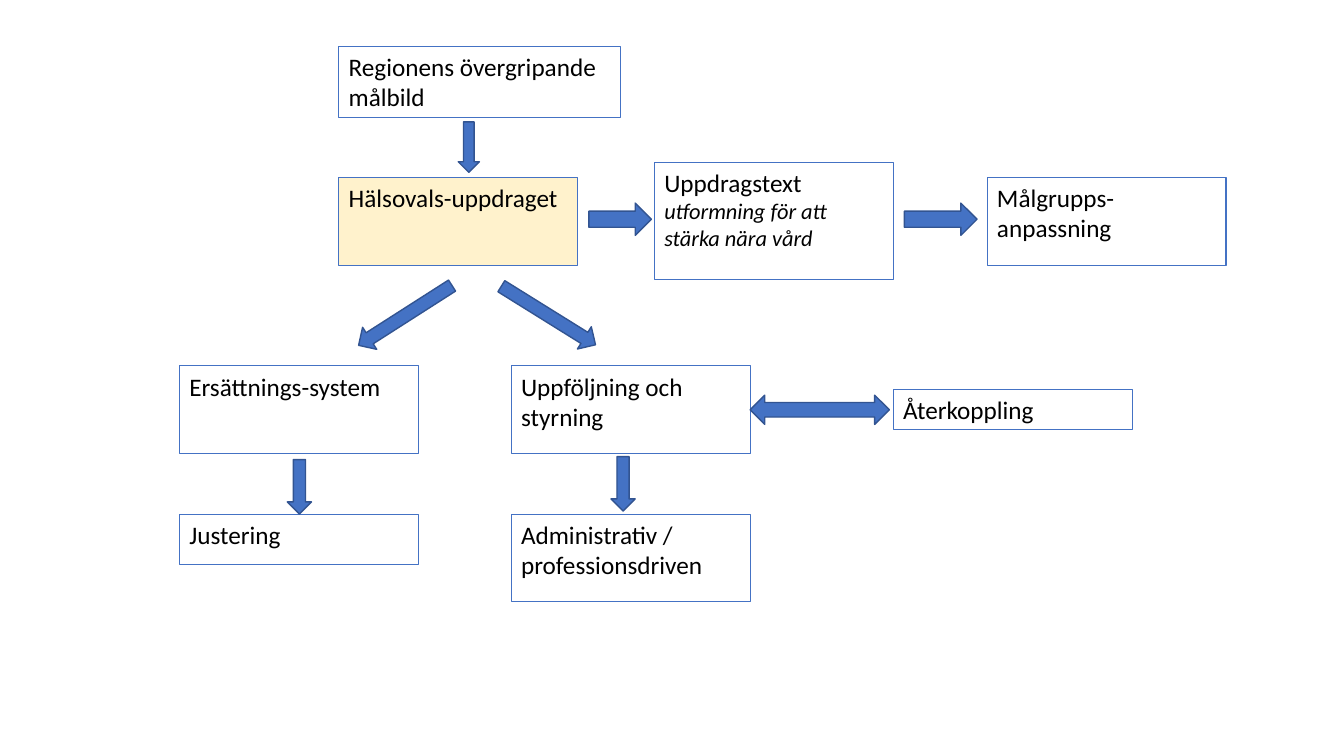
from pptx import Presentation
from pptx.dml.color import RGBColor
from pptx.enum.shapes import MSO_SHAPE
from pptx.enum.text import MSO_ANCHOR, MSO_AUTO_SIZE
from pptx.util import Inches, Pt

THEME = {
    "font": "Calibri",
    "text": "000000", "blue": "4472C4", "edge": "325491", "cream": "FFF2CC",
    "body": 18, "note": 16, "thin": 0.75, "line": 1,
}
WIDE, TALL = 2.37, 0.87
COLS = {"left": 1.78, "goal": 3.36, "mid": 5.07, "text": 6.49, "back": 8.86, "group": 9.79}
ROWS = {"top": 0.46, "task": 1.76, "follow": 3.63, "last": 5.1}
TASK_MID = ROWS["task"] + TALL / 2
BACK_MID = ROWS["follow"] + TALL / 2

# text, note, column, top, width, height, fill
BOXES = [
    ("Regionens övergripande målbild", None, "goal", ROWS["top"], 2.79, 0.71, None),
    ("Uppdragstext", "utformning för att stärka nära vård", "text", 1.61, WIDE, 1.16, None),
    ("Ersättnings-system", None, "left", ROWS["follow"], WIDE, TALL, None),
    ("Målgrupps-anpassning", None, "group", ROWS["task"], WIDE, TALL, None),
    ("Hälsovals-uppdraget", None, "goal", ROWS["task"], WIDE, TALL, "cream"),
    ("Återkoppling", None, "back", 3.86, WIDE, 0.4, None),
    ("Uppföljning och styrning", None, "mid", ROWS["follow"], WIDE, TALL, None),
    ("Administrativ / professionsdriven", None, "mid", ROWS["last"], WIDE, TALL, None),
    ("Justering", None, "left", ROWS["last"], WIDE, 0.5, None),
]

DOWN, RIGHT, BOTH = MSO_SHAPE.DOWN_ARROW, MSO_SHAPE.RIGHT_ARROW, MSO_SHAPE.LEFT_RIGHT_ARROW
# kind, centre x, centre y, width, height, turn
ARROWS = [
    (DOWN, 4.65, 1.46, 0.21, 0.5, 0),
    (DOWN, 2.97, 4.83, 0.24, 0.54, 0),
    (DOWN, 6.18, 4.8, 0.24, 0.54, 0),
    (DOWN, 4.02, 3.13, 0.26, 1.1, 57.4),
    (DOWN, 5.44, 3.13, 0.26, 1.1, 301.9),
    (RIGHT, 6.15, TASK_MID - 0.02, 0.62, 0.32, 0),
    (RIGHT, 9.33, TASK_MID - 0.02, 0.72, 0.32, 0),
    (BOTH, 8.13, BACK_MID, 1.38, 0.29, 0),
]


def color(name):
    return RGBColor.from_string(THEME[name])


def outline(shape, name, width):
    shape.line.color.rgb = color(name)
    shape.line.width = Pt(THEME[width])


def write(par, text, size, slant=False):
    run = par.add_run()
    run.text = text
    form = {"name": THEME["font"], "size": Pt(THEME[size])}
    if slant:
        form["italic"] = True
    for key, value in form.items():
        setattr(run.font, key, value)
    run.font.color.rgb = color("text")


def add_box(slide, text, note, col, top, width, height, fill):
    box = slide.shapes.add_textbox(*map(Inches, (COLS[col], top, width, height)))
    outline(box, "blue", "thin")
    if fill:
        box.fill.solid()
        box.fill.fore_color.rgb = color(fill)
    frame = box.text_frame
    form = {"word_wrap": True, "auto_size": MSO_AUTO_SIZE.NONE,
            "vertical_anchor": MSO_ANCHOR.TOP}
    for key, value in form.items():
        setattr(frame, key, value)
    write(frame.paragraphs[0], text, "body")
    if note:
        write(frame.add_paragraph(), note, "note", True)


def add_arrow(slide, kind, x, y, width, height, turn):
    place = (x - width / 2, y - height / 2, width, height)
    arrow = slide.shapes.add_shape(kind, *map(Inches, place))
    arrow.shadow.inherit = False
    arrow.rotation = turn
    arrow.fill.solid()
    arrow.fill.fore_color.rgb = color("blue")
    outline(arrow, "edge", "line")


def main():
    deck = Presentation()
    deck.slide_width, deck.slide_height = Inches(13.33), Inches(7.5)
    slide = deck.slides.add_slide(deck.slide_layouts[6])
    for box in BOXES:
        add_box(slide, *box)
    for arrow in ARROWS:
        add_arrow(slide, *arrow)
    deck.save("out.pptx")


if __name__ == "__main__":
    main()
